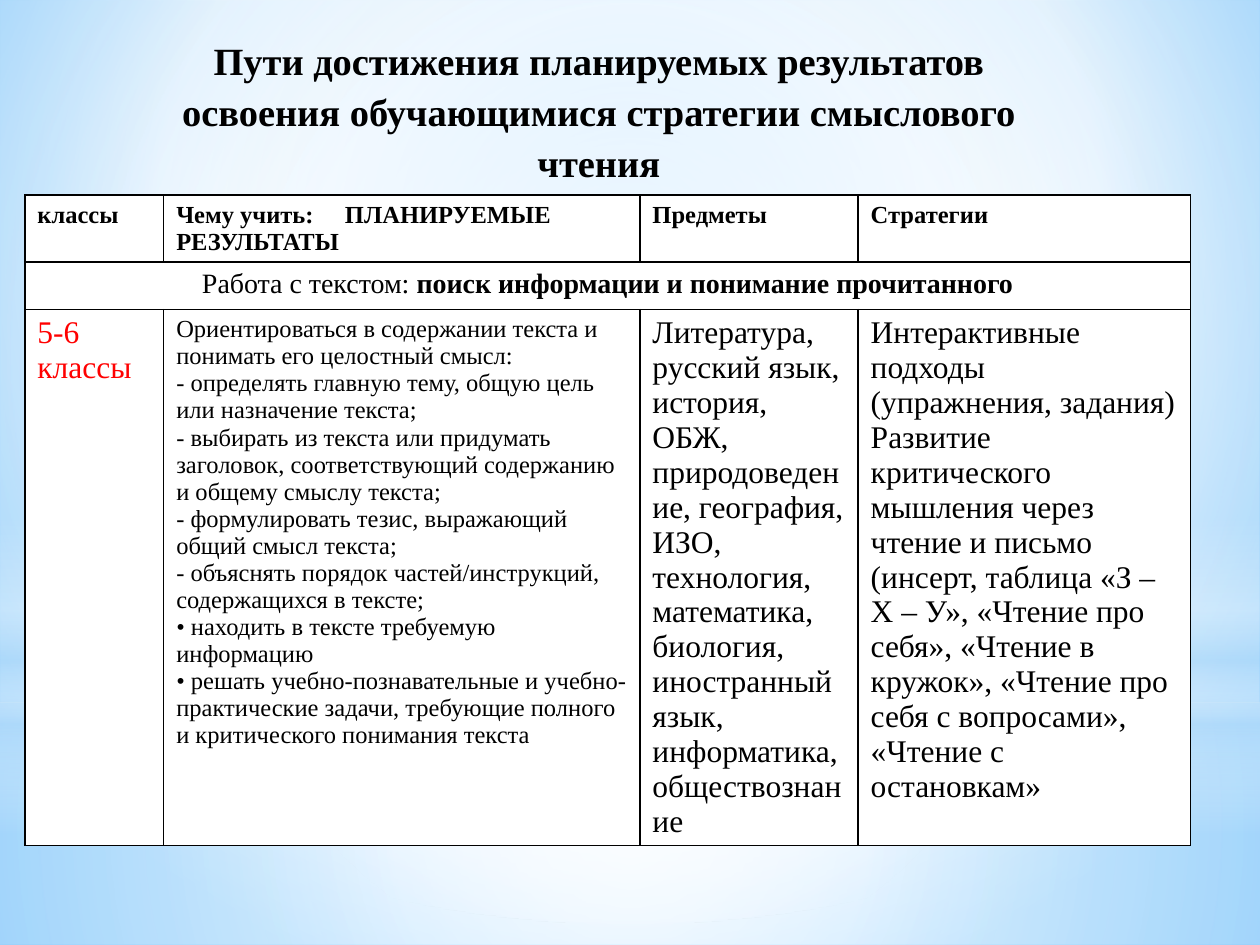
import pptx
import pptx.util
import pptx.oxml
import pptx.oxml.ns
import pptx.dml.color
import pptx.enum.shapes
import pptx.enum.text

Cm = pptx.util.Cm
Pt = pptx.util.Pt
BLACK = pptx.dml.color.RGBColor(0x00, 0x00, 0x00)
RED = pptx.dml.color.RGBColor(0xFF, 0x00, 0x00)
WHITE = pptx.dml.color.RGBColor(0xFF, 0xFF, 0xFF)
PALE_BLUE = pptx.dml.color.RGBColor(0xB4, 0xDC, 0xFA)
SKY_BLUE = pptx.dml.color.RGBColor(0x9E, 0xD5, 0xFF)
DEEP_BLUE = pptx.dml.color.RGBColor(0x5B, 0xB9, 0xFF)
FONT = "Times New Roman"
DRAWING = pptx.oxml.ns.nsdecls("a")
RECTANGLE = pptx.enum.shapes.MSO_SHAPE.RECTANGLE
OVAL = pptx.enum.shapes.MSO_SHAPE.OVAL


def set_gradient(properties, stops, focus):
    stop_xml = "".join(
        f'<a:gs pos="{position * 1000}"><a:srgbClr val="{color}">'
        f'<a:alpha val="{opacity * 1000}"/></a:srgbClr></a:gs>'
        for position, color, opacity in stops)
    if focus:
        left, top, right, bottom = (side * 1000 for side in focus)
        direction = (f'<a:path path="circle"><a:fillToRect l="{left}" t="{top}" '
                     f'r="{right}" b="{bottom}"/></a:path>')
    else:
        direction = '<a:lin ang="5400000" scaled="0"/>'
    gradient = pptx.oxml.parse_xml(
        f'<a:gradFill {DRAWING} rotWithShape="1"><a:gsLst>{stop_xml}</a:gsLst>'
        f'{direction}</a:gradFill>')
    properties.replace(properties.find(pptx.oxml.ns.qn("a:gradFill")), gradient)


def format_run(run, size, bold, color):
    run.font.name = FONT
    run.font.size = Pt(size)
    run.font.bold = bold
    run.font.color.rgb = color


deck = pptx.Presentation()
deck.slide_width = Cm(25.4)
deck.slide_height = Cm(19.05)
page = deck.slides.add_slide(deck.slide_layouts[5])

page.background.fill.gradient()
set_gradient(page.element.find(".//" + pptx.oxml.ns.qn("p:bgPr")),
             [(0, SKY_BLUE, 100), (60, WHITE, 100), (100, DEEP_BLUE, 100)],
             (20, 10, 20, 60))

CENTER = (50, 50, 50, 50)
glows = [
    (RECTANGLE, 14.17, 4.88, CENTER,
     [(0, WHITE, 91), (37, WHITE, 76), (100, PALE_BLUE, 79)]),
    (RECTANGLE, 0, 14.17, CENTER,
     [(0, WHITE, 89), (48, WHITE, 62), (100, PALE_BLUE, 79)]),
    (RECTANGLE, 10.46, 6.35, None,
     [(0, WHITE, 0), (29, WHITE, 30), (45, PALE_BLUE, 40),
      (55, WHITE, 26), (65, PALE_BLUE, 60), (100, WHITE, 0)]),
    (OVAL, 4.45, 14.17, CENTER, [(0, WHITE, 100), (56, WHITE, 0)]),
]
for kind, top, height, focus, stops in glows:
    glow = page.shapes.add_shape(kind, 0, Cm(top), deck.slide_width, Cm(height))
    glow.shadow.inherit = False
    glow.line.fill.background()
    glow.fill.gradient()
    set_gradient(glow.element.spPr, stops, focus)

title = page.shapes.title
title.element.getparent().append(title.element)
title.left, title.top, title.width, title.height = Cm(3.18), Cm(0.53), Cm(17.78), Cm(16.79)
frame = title.text_frame
frame.text = ("Пути достижения планируемых результатов освоения обучающимися "
              "стратегии смыслового чтения")
frame.word_wrap = True
frame.auto_size = pptx.enum.text.MSO_AUTO_SIZE.NONE
frame.vertical_anchor = pptx.enum.text.MSO_ANCHOR.TOP
heading = frame.paragraphs[0]
heading.alignment = pptx.enum.text.PP_ALIGN.CENTER
heading.line_spacing = 1.1
heading.space_before = Pt(0)
format_run(heading.runs[0], 22, True, BLACK)

columns = [2.8, 9.6, 4.4, 6.7]
rows = [1.35, 0.96, 10.8]
table = page.shapes.add_table(len(rows), len(columns), Cm(0.5), Cm(3.93),
                              Cm(sum(columns)), Cm(sum(rows))).table
for column, width in zip(table.columns, columns):
    column.width = Cm(width)
for row, height in zip(table.rows, rows):
    row.height = Cm(height)

for cell in table.iter_cells():
    properties = cell._tc.get_or_add_tcPr()
    for side in ("lnL", "lnR", "lnT", "lnB"):
        properties.append(pptx.oxml.parse_xml(
            f'<a:{side} {DRAWING} w="12700"><a:solidFill><a:srgbClr val="{BLACK}"/>'
            f'</a:solidFill></a:{side}>'))
    cell.fill.solid()
    cell.fill.fore_color.rgb = WHITE

goals = [
    "Ориентироваться в содержании текста и понимать его целостный смысл:",
    "- определять главную тему, общую цель или назначение текста;",
    "- выбирать из текста или придумать заголовок, соответствующий содержанию "
    "и общему смыслу текста;",
    "- формулировать тезис, выражающий общий смысл текста;",
    "- объяснять порядок частей/инструкций, содержащихся в тексте;",
    "• находить в тексте требуемую информацию",
    "• решать учебно-познавательные и учебно-практические задачи, требующие полного "
    "и критического понимания текста",
]
subjects = ("Литература, русский язык, история, ОБЖ, природоведение, география, ИЗО, "
            "технология, математика, биология, иностранный язык, информатика, "
            "обществознание")
strategies = [
    "Интерактивные подходы\v(упражнения, задания)",
    "Развитие критического мышления через чтение и письмо (инсерт, таблица "
    "«З – Х – У», «Чтение про себя», «Чтение в кружок», «Чтение про себя с вопросами», "
    "«Чтение с остановкам»",
]
headers = ["классы", "Чему учить:\tПЛАНИРУЕМЫЕ РЕЗУЛЬТАТЫ", "Предметы", "Стратегии"]
contents = [(0, index, header, 14, True, BLACK) for index, header in enumerate(headers)]
contents += [
    (2, 0, "5-6 классы", 18, False, RED),
    (2, 1, "\n".join(goals), 14, False, BLACK),
    (2, 2, subjects, 18, False, BLACK),
    (2, 3, "\n".join(strategies), 18, False, BLACK),
]
for row, column, text, size, bold, color in contents:
    frame = table.cell(row, column).text_frame
    frame.text = text
    for para in frame.paragraphs:
        for span in para.runs:
            format_run(span, size, bold, color)

goal_header = table.cell(0, 1).text_frame.paragraphs[0]
goal_header._p.get_or_add_pPr().append(pptx.oxml.parse_xml(
    f'<a:tabLst {DRAWING}><a:tab pos="{Cm(3.4)}" algn="l"/></a:tabLst>'))

section = table.cell(1, 0)
section.merge(table.cell(1, len(columns) - 1))
para = section.text_frame.paragraphs[0]
para.alignment = pptx.enum.text.PP_ALIGN.CENTER
for text, bold in (("Работа с текстом: ", False),
                   ("поиск информации и понимание прочитанного", True)):
    span = para.add_run()
    span.text = text
    format_run(span, 16, bold, BLACK)

deck.save("out.pptx")
